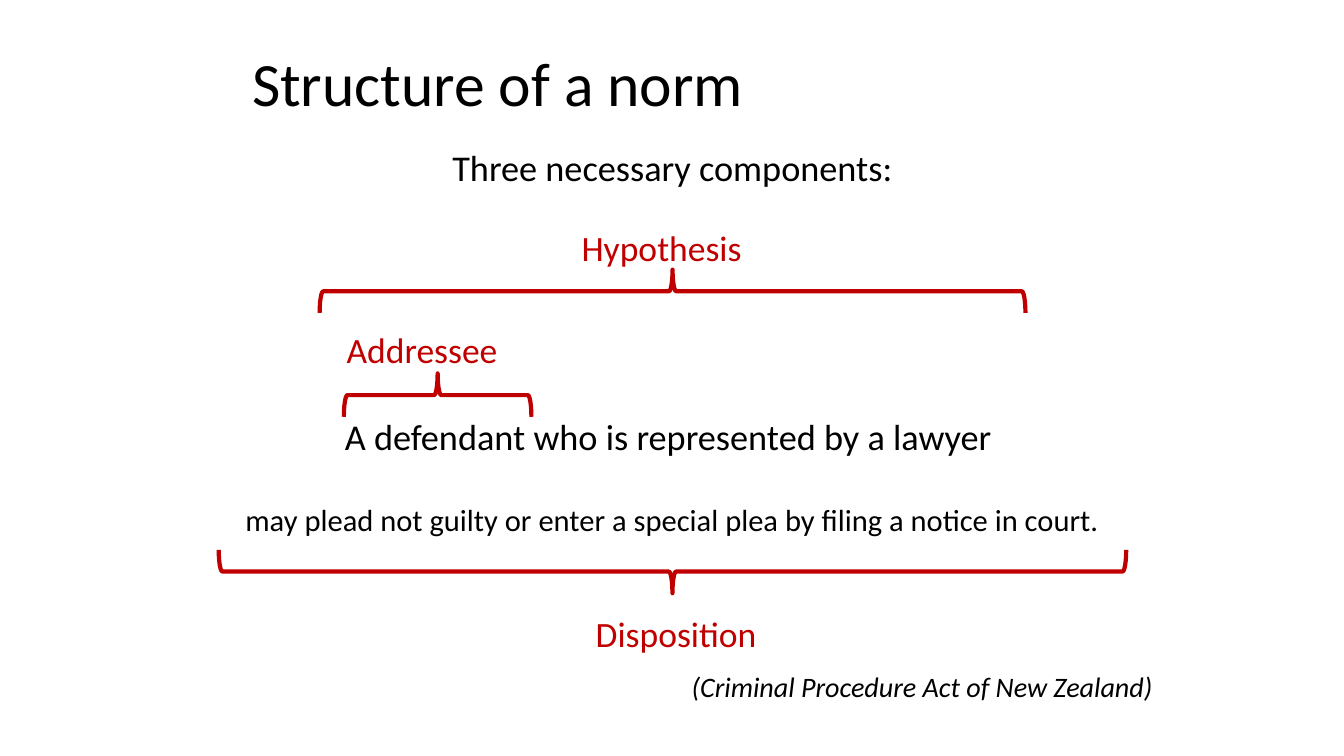
from pptx import Presentation
from pptx.dml.color import RGBColor
from pptx.enum.shapes import MSO_SHAPE
from pptx.enum.text import MSO_ANCHOR, MSO_AUTO_SIZE, PP_ALIGN
from pptx.util import Inches, Pt

LEFT, CENTER, RIGHT = PP_ALIGN.LEFT, PP_ALIGN.CENTER, PP_ALIGN.RIGHT
MIDDLE, NO_FIT = MSO_ANCHOR.MIDDLE, MSO_AUTO_SIZE.NONE
LEFT_BRACE = MSO_SHAPE.LEFT_BRACE
COLORS = {"text": "000000", "accent": "C00000"}
BRACE_DEPTH = 0.43
HANGING = Inches(0.21)

BODY = [
    ("Three necessary components:", 25.9, 10, CENTER, False),
    ("A defendant who is represented by a lawyer ", 25.9, 170.5, CENTER, False),
    ("may plead not guilty or enter a special plea by filing a notice in court.",
     21.8, 38.6, CENTER, False),
    ("(Criminal Procedure Act of New Zealand)", 20.1, 101.4, RIGHT, True),
]
LABELS = [("Addressee", 3.34, 3.2), ("Hypothesis", 5.67, 2.19), ("Disposition", 5.81, 6.02)]
BRACES = [(4.34, 3.92, 1.86, 90), (6.67, 2.89, 7, 90), (6.67, 5.67, 9, 270)]


def place(shape, left, top, width, height):
    """Move and size a shape, in inches."""
    box = {"left": left, "top": top, "width": width, "height": height}
    for name, value in box.items():
        setattr(shape, name, Inches(value))


def write(p, text, size, color, italic=False):
    """Add one formatted run to a paragraph."""
    r = p.add_run()
    r.text = text
    font = {"name": "Calibri", "size": Pt(size), "bold": False, "italic": italic}
    for name, value in font.items():
        setattr(r.font, name, value)
    r.font.color.rgb = RGBColor.from_string(COLORS[color])


def format_frame(tf):
    """Centre a placeholder's text vertically at its set size."""
    for name, value in {"vertical_anchor": MIDDLE, "auto_size": NO_FIT, "word_wrap": True}.items():
        setattr(tf, name, value)


def fill_title(shape, text):
    """Place and write the slide title."""
    place(shape, 2.4, 0.28, 8.54, 1.17)
    format_frame(shape.text_frame)
    p = shape.text_frame.paragraphs[0]
    p.alignment, p.line_spacing = LEFT, 0.87
    write(p, text, 44, "text")


def fill_body(shape, lines):
    """Place the body and write its lines, spaced to leave room for the braces."""
    place(shape, 1.81, 1.49, 9.72, 5.55)
    tf = shape.text_frame
    format_frame(tf)
    for i, (text, size, before, align, italic) in enumerate(lines):
        p = tf.add_paragraph() if i else tf.paragraphs[0]
        layout = {"alignment": align, "line_spacing": 0.7,
                  "space_before": Pt(before), "space_after": Pt(0)}
        for name, value in layout.items():
            setattr(p, name, value)
        pPr = p._p.get_or_add_pPr()
        pPr.set("marL", str(HANGING))
        pPr.set("indent", str(-HANGING))
        write(p, text, size, "text", italic)


def add_label(s, text, left, top):
    """Add the name of a norm component."""
    tb = s.shapes.add_textbox(Inches(left), Inches(top), Inches(2), Inches(0.53))
    tb.text_frame.word_wrap = True
    write(tb.text_frame.paragraphs[0], text, 25.4, "accent")


def add_brace(s, center_x, center_y, span, rotation):
    """Add a horizontal brace around its centre."""
    sp = s.shapes.add_shape(
        LEFT_BRACE, Inches(center_x - BRACE_DEPTH / 2), Inches(center_y - span / 2),
        Inches(BRACE_DEPTH), Inches(span))
    sp.rotation = rotation
    sp.shadow.inherit = False
    sp.fill.background()
    sp.line.color.rgb = RGBColor.from_string(COLORS["accent"])
    sp.line.width = Pt(3)


def main():
    """Build and save the slide."""
    prs = Presentation()
    prs.slide_width, prs.slide_height = Inches(13.33), Inches(7.5)
    s = prs.slides.add_slide(prs.slide_layouts[0])
    fill_title(s.shapes.title, "Structure of a norm")
    fill_body(s.placeholders[1], BODY)
    for brace in BRACES:
        add_brace(s, *brace)
    for label in LABELS:
        add_label(s, *label)
    prs.save("out.pptx")


if __name__ == "__main__":
    main()
